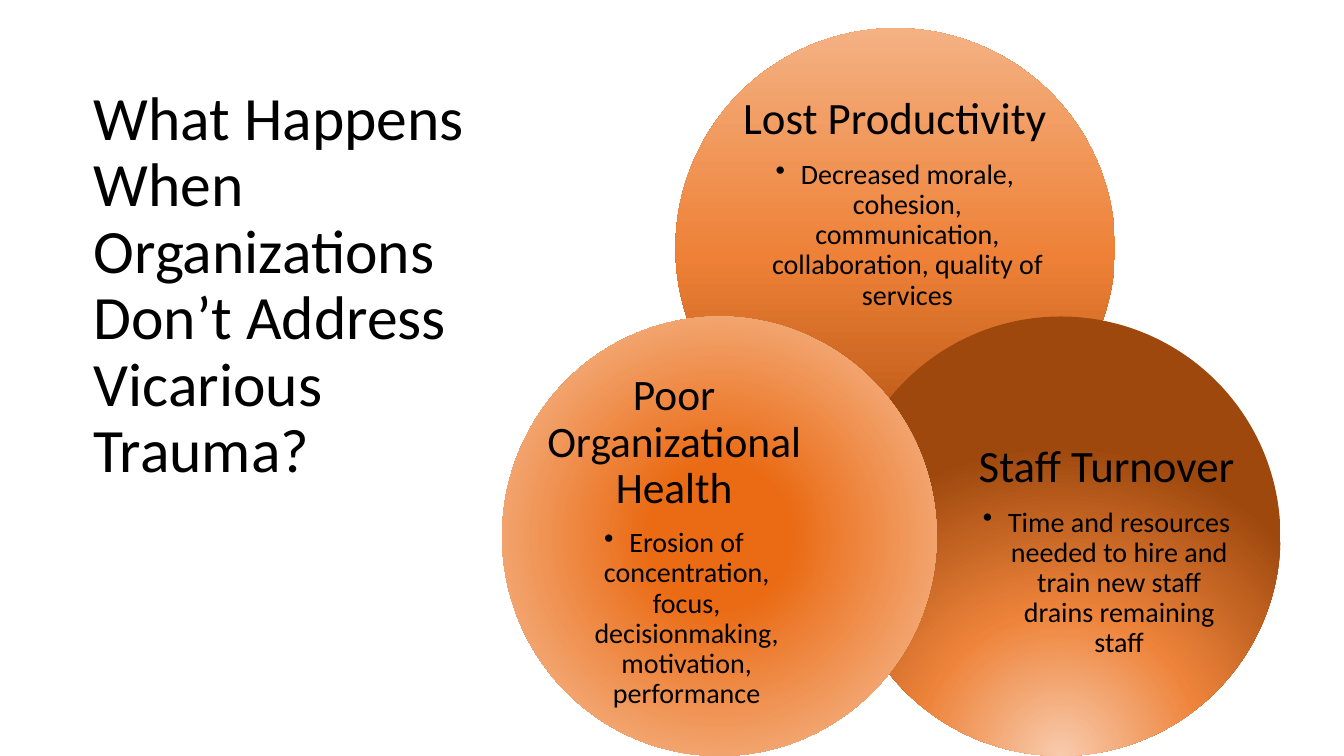
from lxml import etree
from pptx import Presentation, util as u
from pptx.dml.color import RGBColor
from pptx.enum import shapes, text
from pptx.oxml.ns import qn

THEME = {"font": "Calibri", "ink": "000000", "title": 44, "heading": 32,
         "long_heading": 31, "body": 20}
TITLE = "What Happens When Organizations Don’t Address Vicarious Trauma?"
CIRCLES = [
    {"circle": (6.7, 0.28, 4.36, 4.36), "label": (7.28, 1.04, 3.19, 1.96),
     "stops": [(0, "B0500F"), (48, "EE8137"), (100, "F4B183")],
     "angle": 270, "size": "heading", "bottom": 0,
     "heading": "Lost Productivity",
     "detail": "Decreased morale, cohesion, communication, collaboration, quality of services"},
    {"circle": (8.34, 3.14, 4.36, 4.36), "label": (9.67, 4.27, 2.61, 2.4),
     "stops": [(0, "F8CBAD"), (46, "EE843B"), (100, "9E480E")],
     "focus": (50, 130, 50, -30), "size": "heading", "bottom": 0,
     "heading": "Staff Turnover",
     "detail": "Time and resources needed to hire and train new staff drains remaining staff"},
    {"circle": (4.98, 3.14, 4.31, 4.36), "label": (5.39, 4.27, 2.59, 2.4),
     "stops": [(0, "EA6B14"), (23, "EA6B14"), (82, "F4B183"), (97, "B85410")],
     "focus": (50, 50, 50, 50), "size": "long_heading", "bottom": 0.2,
     "heading": "Poor Organizational Health",
     "detail": "Erosion of concentration, focus, decisionmaking, motivation, performance"},
]


def inches(values):
    return [u.Inches(value) for value in values]


def add_bullet(para, indent=0.25):
    props = para._p.get_or_add_pPr()
    props.set("marL", str(u.Inches(indent)))
    props.set("indent", str(-u.Inches(indent)))
    etree.SubElement(props, qn("a:buChar"), char="•")


def add_text(page, place, paragraphs, anchor, align, margins):
    box = page.shapes.add_textbox(*inches(place))
    frame = box.text_frame
    frame.word_wrap = True
    frame.vertical_anchor = anchor
    (frame.margin_left, frame.margin_top,
     frame.margin_right, frame.margin_bottom) = inches(margins)
    for index, (words, size, after, bullet) in enumerate(paragraphs):
        para = frame.add_paragraph() if index else frame.paragraphs[0]
        para.alignment = align
        para.line_spacing = 0.9
        para.space_after = u.Pt(after)
        if bullet:
            add_bullet(para)
        span = para.add_run()
        span.text = words
        span.font.name = THEME["font"]
        span.font.size = u.Pt(size)
        span.font.color.rgb = RGBColor.from_string(THEME["ink"])


def set_gradient(shape, stops, angle=None, focus=None):
    shape.fill.gradient()
    gradient = shape._element.spPr.find(qn("a:gradFill"))
    for child in list(gradient):
        gradient.remove(child)
    stop_list = etree.SubElement(gradient, qn("a:gsLst"))
    for position, color in stops:
        stop = etree.SubElement(stop_list, qn("a:gs"), pos=str(position * 1000))
        etree.SubElement(stop, qn("a:srgbClr"), val=color)
    if focus:
        route = etree.SubElement(gradient, qn("a:path"), path="circle")
        sides = {side: str(value * 1000) for side, value in zip("ltrb", focus)}
        etree.SubElement(route, qn("a:fillToRect"), **sides)
    else:
        etree.SubElement(gradient, qn("a:lin"), ang=str(angle * 60000), scaled="0")


def add_circle(page, item):
    circle = page.shapes.add_shape(shapes.MSO_SHAPE.OVAL, *inches(item["circle"]))
    circle.shadow.inherit = False
    circle.line.fill.background()
    set_gradient(circle, item["stops"], item.get("angle"), item.get("focus"))
    size = THEME[item["size"]]
    add_text(page, item["label"],
             [(item["heading"], size, size * 0.35, False),
              (item["detail"], THEME["body"], THEME["body"] * 0.15, True)],
             anchor=text.MSO_ANCHOR.MIDDLE, align=text.PP_ALIGN.CENTER,
             margins=(0, 0, 0, item["bottom"]))


def main():
    deck = Presentation()
    deck.slide_width, deck.slide_height = inches((13.33, 7.5))
    page = deck.slides.add_slide(deck.slide_layouts[6])
    for item in CIRCLES:
        add_circle(page, item)
    add_text(page, (0.83, 0.54, 4.3, 4.33), [(TITLE, THEME["title"], 0, False)],
             anchor=text.MSO_ANCHOR.BOTTOM, align=text.PP_ALIGN.LEFT,
             margins=(0.1, 0.05, 0.1, 0.05))
    deck.save("out.pptx")


if __name__ == "__main__":
    main()
